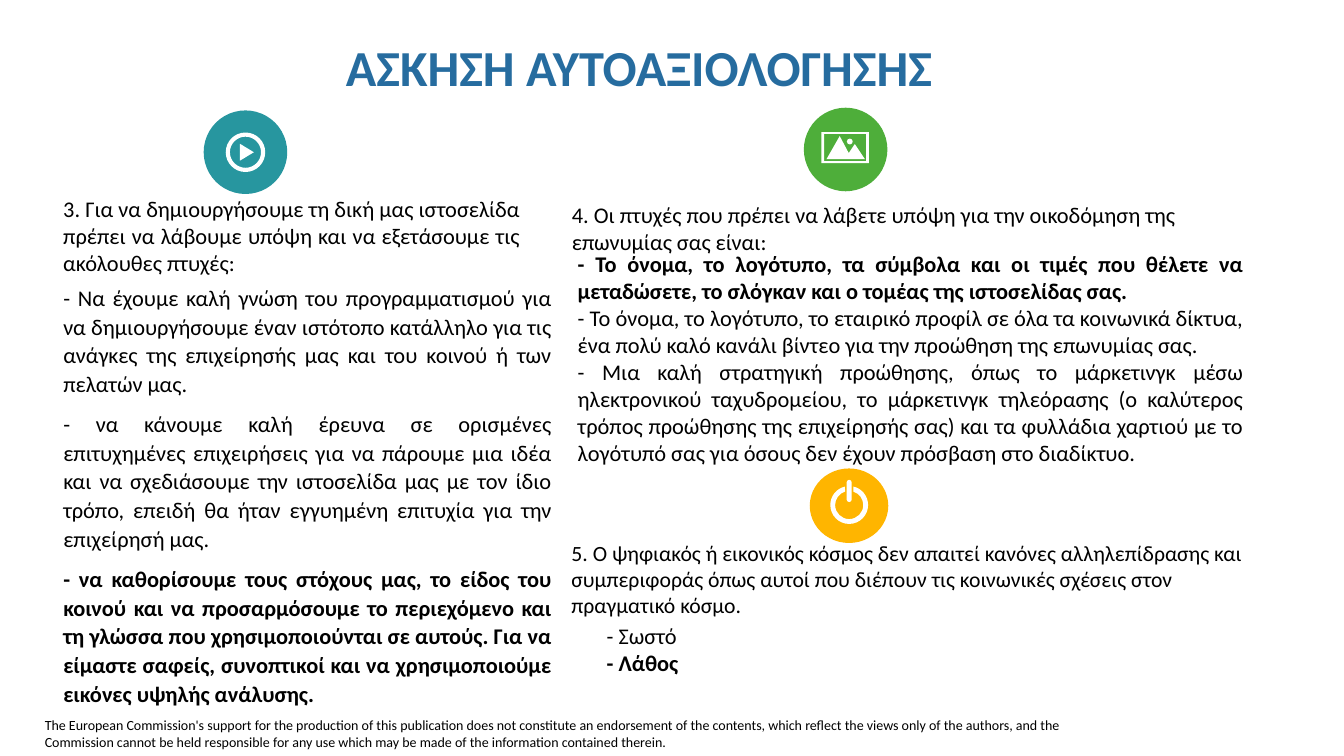
from dataclasses import dataclass
from math import ceil, cos, floor, radians, sin, tan

from lxml.etree import SubElement
from pptx import Presentation
from pptx.dml.color import RGBColor
from pptx.enum.shapes import MSO_SHAPE
from pptx.enum.text import MSO_ANCHOR, MSO_AUTO_SIZE, PP_ALIGN
from pptx.oxml.ns import qn
from pptx.util import Inches, Pt

COLUMNS = 64


@dataclass(frozen=True)
class Theme:
    font: str = "Calibri"
    ink: str = "000000"
    title: str = "266C9F"
    white: str = "FFFFFF"
    teal: str = "27969F"
    green: str = "4EAE3A"
    amber: str = "FFB500"
    title_size: float = 36
    body_size: float = 16
    compact_size: float = 15.5
    footer_size: float = 10


def arc(x, y, radius, start=0, end=360):
    """Bezier points of an arc, in degrees clockwise from the right.

    The first point is (x, y); those after it are (x, y, True), three to a curve.
    """
    quarters = range(ceil(min(start, end) / 90), floor(max(start, end) / 90) + 1)
    stops = sorted({start, end, *(90 * q for q in quarters)}, reverse=start > end)

    def point(degrees, pull=0):
        a = radians(degrees)
        return (x + radius * (cos(a) - pull * sin(a)), y + radius * (sin(a) + pull * cos(a)))

    points = [point(start)]
    for a, b in zip(stops, stops[1:]):
        pull = 4 / 3 * tan(radians(b - a) / 4)
        points += [(*point(a, pull), True), (*point(b, -pull), True), (*point(b), True)]
    return points


def frame(half_width, half_height):
    return [(-half_width, -half_height), (half_width, -half_height),
            (half_width, half_height), (-half_width, half_height)]


class SlideBuilder:
    """Draws on one slide; lengths are square grid cells, 64 across and 36 down."""

    def __init__(self, prs, theme):
        self.theme = theme
        self.cell = prs.slide_width / COLUMNS
        self.shapes = prs.slides.add_slide(prs.slide_layouts[6]).shapes

    def emu(self, *lengths):
        return [round(n * self.cell) for n in lengths]

    def paint(self, sp, color):
        sp.shadow.inherit = False
        sp.fill.solid()
        sp.fill.fore_color.rgb = RGBColor.from_string(color)
        sp.line.fill.background()

    def text(self, at, *paragraphs, size=None, color=None, bold=(), align=None,
             spacing=None, after=None, anchor=MSO_ANCHOR.TOP, grow=False):
        """Add a text box; bold lists the indexes of the bold paragraphs."""
        tf = self.shapes.add_textbox(*self.emu(*at)).text_frame
        tf.word_wrap = True
        tf.vertical_anchor = anchor
        tf.auto_size = MSO_AUTO_SIZE.SHAPE_TO_FIT_TEXT if grow else MSO_AUTO_SIZE.NONE
        for i, content in enumerate(paragraphs):
            p = tf.add_paragraph() if i else tf.paragraphs[0]
            p.alignment = align
            p.line_spacing = spacing
            if after:
                p.space_after = Pt(after)
            r = p.add_run()
            r.text = content
            r.font.name = self.theme.font
            r.font.size = Pt(size or self.theme.body_size)
            r.font.bold = i in bold
            r.font.color.rgb = RGBColor.from_string(color or self.theme.ink)

    def disc(self, at, color):
        self.paint(self.shapes.add_shape(MSO_SHAPE.OVAL, *self.emu(*at)), color)

    def icon(self, center, *contours):
        """Draw closed contours, given around center, as one white outline."""
        cx, cy = center
        builder = None
        for contour in contours:
            first, *rest = [self.emu(cx + x, cy + y) for x, y, *_ in contour]
            if builder is None:
                builder = self.shapes.build_freeform(*first)
            else:
                builder.move_to(*first)
            builder.add_line_segments(rest)
            builder.add_line_segments([], close=True)
        sp = builder.convert_to_shape()
        curved = [len(point) == 3 for contour in contours for point in contour[1:]]
        self.bend(sp, curved)
        self.paint(sp, self.theme.white)

    def bend(self, sp, curved):
        """Join each three segments marked as curved into one Bezier curve."""
        segments = list(sp.element.iter(qn("a:lnTo")))
        marked = [seg for seg, is_curved in zip(segments, curved) if is_curved]
        for i in range(0, len(marked), 3):
            group = marked[i:i + 3]
            outline = group[0].getparent()
            curve = SubElement(outline, qn("a:cubicBezTo"))
            group[0].addprevious(curve)
            for seg in group:
                curve.append(seg[0])
                outline.remove(seg)


def main():
    prs = Presentation()
    prs.slide_width, prs.slide_height = Inches(13.333), Inches(7.5)
    theme = Theme()
    s = SlideBuilder(prs, theme)
    justify = PP_ALIGN.JUSTIFY

    s.text((1.66, 33.89, 50.21, 2.11),
           "The European Commission's support for the production of this publication does "
           "not constitute an endorsement of the contents, which reflect the views only of "
           "the authors, and the Commission cannot be held responsible for any use which "
           "may be made of the information contained therein.",
           size=theme.footer_size, grow=True)

    # Question 3
    s.text((2.54, 9.07, 22.7, 1.44),
           "3. Για να δημιουργήσουμε τη δική μας ιστοσελίδα πρέπει να λάβουμε υπόψη και να "
           "εξετάσουμε τις ακόλουθες πτυχές:", align=justify)
    s.text((2.54, 13.2, 24.21, 4.37),
           "- Να έχουμε καλή γνώση του προγραμματισμού για να δημιουργήσουμε έναν ιστότοπο "
           "κατάλληλο για τις ανάγκες της επιχείρησής μας και του κοινού ή των πελατών μας.",
           "- να κάνουμε καλή έρευνα σε ορισμένες επιτυχημένες επιχειρήσεις για να πάρουμε "
           "μια ιδέα και να σχεδιάσουμε την ιστοσελίδα μας με τον ίδιο τρόπο, επειδή θα "
           "ήταν εγγυημένη επιτυχία για την επιχείρησή μας.",
           "- να καθορίσουμε τους στόχους μας, το είδος του κοινού και να προσαρμόσουμε το "
           "περιεχόμενο και τη γλώσσα που χρησιμοποιούνται σε αυτούς. Για να είμαστε "
           "σαφείς, συνοπτικοί και να χρησιμοποιούμε εικόνες υψηλής ανάλυσης.",
           bold=(2,), align=justify, spacing=1.07, after=8)
    s.disc((9.7, 5.26, 3.98, 3.98), theme.teal)
    s.icon((11.69, 7.25), [(-0.26, -0.4), (0.4, 0), (-0.26, 0.4)],
           arc(0, 0, 0.74), arc(0, 0, 0.94))

    s.text((16, 1.46, 45.46, 3.79), "ΑΣΚΗΣΗ ΑΥΤΟΑΞΙΟΛΟΓΗΣΗΣ", size=theme.title_size,
           color=theme.title, bold=(0,), spacing=0.9, anchor=MSO_ANCHOR.MIDDLE)

    # Question 4
    s.text((26.76, 9.36, 33.94, 1.78),
           "4. Οι πτυχές που πρέπει να λάβετε υπόψη για την οικοδόμηση της επωνυμίας σας "
           "είναι:")
    s.text((27.04, 11.7, 32.65, 4.37),
           "- Το όνομα, το λογότυπο, τα σύμβολα και οι τιμές που θέλετε να μεταδώσετε, το "
           "σλόγκαν και ο τομέας της ιστοσελίδας σας.",
           "- Το όνομα, το λογότυπο, το εταιρικό προφίλ σε όλα τα κοινωνικά δίκτυα, ένα "
           "πολύ καλό κανάλι βίντεο για την προώθηση της επωνυμίας σας.",
           "- Μια καλή στρατηγική προώθησης, όπως το μάρκετινγκ μέσω ηλεκτρονικού "
           "ταχυδρομείου, το μάρκετινγκ τηλεόρασης (ο καλύτερος τρόπος προώθησης της "
           "επιχείρησής σας) και τα φυλλάδια χαρτιού με το λογότυπό σας για όσους δεν "
           "έχουν πρόσβαση στο διαδίκτυο.", bold=(0,), align=justify)

    # Question 5
    s.text((26.74, 25.46, 32.88, 1.25),
           "5. Ο ψηφιακός ή εικονικός κόσμος δεν απαιτεί κανόνες αλληλεπίδρασης και "
           "συμπεριφοράς όπως αυτοί που διέπουν τις κοινωνικές σχέσεις στον πραγματικό "
           "κόσμο.", size=theme.compact_size)
    s.text((28.42, 29.38, 11.52, 4.37), "- Σωστό", "- Λάθος", bold=(1,))

    s.disc((38.28, 5.13, 3.98, 3.98), theme.green)
    s.disc((38.56, 22.31, 3.74, 3.55), theme.amber)
    mountains = [(-0.26, -0.55), (0.17, 0.26), (0.46, -0.17), (0.94, 0.55), (-0.89, 0.55)]
    s.icon((40.25, 7.03), arc(0.22, -0.29, 0.14), mountains,
           frame(1.0, 0.65), frame(1.13, 0.74))
    s.icon((40.44, 24.05), arc(0, 0, 0.9, -77, 257) + [arc(0, 0, 0.67, 253, -73)[0]]
           + arc(0, 0, 0.67, 253, -73)[1:],
           arc(0, -1.08, 0.12, 180, 360) + arc(0, -0.26, 0.12, 0, 180))

    prs.save("out.pptx")


if __name__ == "__main__":
    main()
